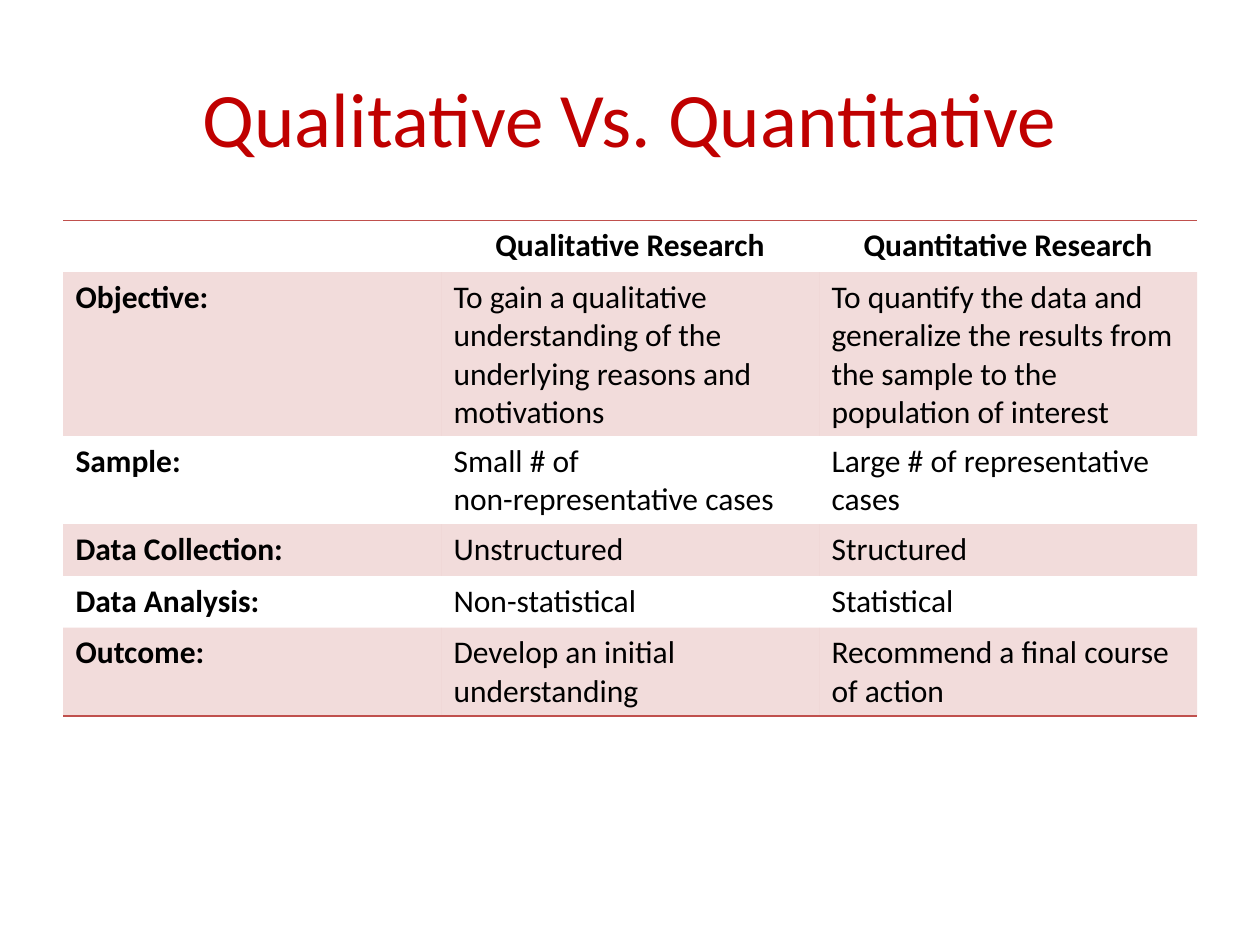
from pptx import Presentation
from pptx.dml.color import RGBColor as RGB
from pptx.enum.text import MSO_ANCHOR as Anchor, PP_ALIGN as Align
from pptx.oxml.ns import qn
from pptx.util import Inches, Pt
from lxml.etree import SubElement as Sub

COLORS = {"title": "C00000", "text": "000000", "accent": "C0504D"}
ROWS = [
    ("", "Qualitative Research", "Quantitative Research"),
    ("Objective:",
     "To gain a qualitative understanding of the underlying reasons and motivations",
     "To quantify the data and generalize the results from the sample "
     "to the population of interest"),
    ("Sample:", "Small # of \nnon-representative cases",
     "Large # of representative cases"),
    ("Data Collection:", "Unstructured", "Structured"),
    ("Data Analysis:", "Non-statistical", "Statistical"),
    ("Outcome:", "Develop an initial understanding",
     "Recommend a final course of action"),
]


class Deck:
    def __init__(self, width, height, font):
        self.prs = Presentation()
        self.prs.slide_width = Inches(width)
        self.prs.slide_height = Inches(height)
        self.slide = self.prs.slides.add_slide(self.prs.slide_layouts[6])
        self.font = font

    def label(self, frame, text, size, color, bold=False, align=Align.LEFT):
        para = frame.paragraphs[0]
        para.text = text
        para.alignment = align
        style = {"name": self.font, "size": Pt(size), "bold": bold}
        for run in para.runs:
            for key, value in style.items():
                setattr(run.font, key, value)
            run.font.color.rgb = RGB.from_string(COLORS[color])

    def title(self, text, box):
        frame = self.slide.shapes.add_textbox(*map(Inches, box)).text_frame
        frame.word_wrap = True
        frame.vertical_anchor = Anchor.MIDDLE
        self.label(frame, text, 44, "title", align=Align.CENTER)

    def rule(self, cell, sides):
        """Draw the named sides of a cell and clear the others."""
        props = cell._tc.get_or_add_tcPr()
        for side in "LRTB":
            line = Sub(props, qn(f"a:ln{side}"), w=str(Pt(1)))
            if side in sides:
                fill = Sub(line, qn("a:solidFill"))
                Sub(fill, qn("a:srgbClr"), val=COLORS["accent"])
            else:
                Sub(line, qn("a:noFill"))

    def tint(self, cell, percent):
        """Fill a cell with the accent colour at the given opacity."""
        cell.fill.solid()
        cell.fill.fore_color.rgb = RGB.from_string(COLORS["accent"])
        tone = cell._tc.tcPr.find(qn("a:solidFill")).find(qn("a:srgbClr"))
        Sub(tone, qn("a:alpha"), val=str(percent * 1000))

    def table(self, rows, left, top, width, height):
        """Add a table with a ruled header, bold labels and tinted odd rows."""
        last = len(rows) - 1
        box = map(Inches, (left, top, width, height * len(rows)))
        grid = self.slide.shapes.add_table(len(rows), len(rows[0]), *box).table
        grid.first_row = grid.horz_banding = False
        for i, row in enumerate(rows):
            sides = "TB" if i == 0 else "B" if i == last else ""
            for j, text in enumerate(row):
                cell = grid.cell(i, j)
                self.label(cell.text_frame, text, 18, "text",
                           bold=i == 0 or j == 0,
                           align=Align.LEFT if i else Align.CENTER)
                self.rule(cell, sides)
                if i % 2:
                    self.tint(cell, 20)
                else:
                    cell.fill.background()


def main():
    deck = Deck(10, 7.5, "Calibri")
    deck.title("Qualitative Vs. Quantitative", (0.5, 0.3, 9, 1.25))
    deck.table(ROWS, 0.5, 1.75, 9, 0.41)
    deck.prs.save("out.pptx")


if __name__ == "__main__":
    main()
